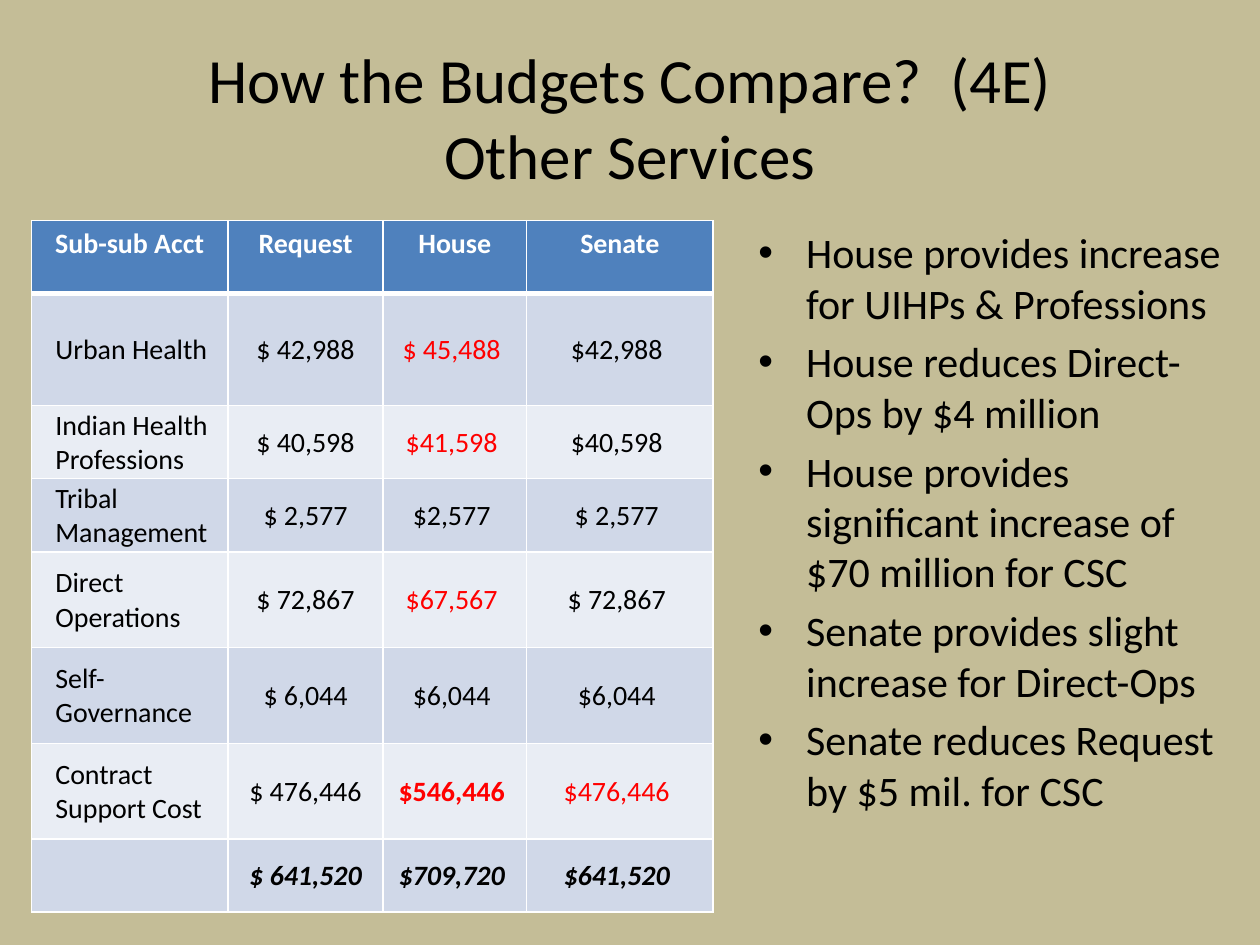
import pptx
import pptx.dml.color
import pptx.enum.text
import pptx.oxml
import pptx.oxml.ns
import pptx.util

Inches = pptx.util.Inches
Pt = pptx.util.Pt
RGBColor = pptx.dml.color.RGBColor
PP_ALIGN = pptx.enum.text.PP_ALIGN
MSO_ANCHOR = pptx.enum.text.MSO_ANCHOR

KHAKI = RGBColor(0xC4, 0xBD, 0x97)
BLACK = RGBColor(0, 0, 0)
WHITE = RGBColor(255, 255, 255)
RED = RGBColor(255, 0, 0)
HEADER_BLUE = RGBColor(0x4F, 0x81, 0xBD)
BANDS = (RGBColor(0xD0, 0xD8, 0xE8), RGBColor(0xE9, 0xED, 0xF4))

TITLE = "How the Budgets Compare?  (4E)\nOther Services"
BUDGETS = [
    ("Sub-sub Acct", "Request", "House", "Senate"),
    ("Urban Health", " $ 42,988 ", "$ 45,488 ", "$42,988 "),
    ("Indian Health Professions", " $ 40,598 ", "$41,598 ", "$40,598 "),
    ("Tribal Management", " $ 2,577 ", "$2,577 ", "$ 2,577 "),
    ("Direct Operations", " $ 72,867 ", "$67,567 ", "$ 72,867 "),
    ("Self-Governance", " $ 6,044 ", "$6,044 ", "$6,044 "),
    ("Contract Support Cost", " $ 476,446 ", "$546,446 ", "$476,446 "),
    ("", " $ 641,520 ", "$709,720 ", "$641,520 "),
]
COLUMN_WIDTHS = (1.56, 1.23, 1.14, 1.48)
ROW_HEIGHTS = (0.58, 0.89, 0.58, 0.58, 0.76, 0.76, 0.76, 0.58)
TOTAL_ROW = len(BUDGETS) - 1
# Cells (row, column) that differ from the request
CHANGED = {(1, 2), (2, 2), (4, 2), (6, 2), (6, 3)}
LARGEST_CHANGE = (6, 2)

FINDINGS = [
    "House provides increase for UIHPs & Professions",
    "House reduces Direct-Ops by $4 million",
    "House provides significant increase of $70 million for CSC",
    "Senate provides slight increase for Direct-Ops",
    "Senate reduces Request by $5 mil. for CSC",
]


def apply(target, values):
    for name, value in values.items():
        setattr(target, name, value)


def write(paragraph, text, size, color=BLACK, **style):
    paragraph.text = text
    for run in paragraph.runs:
        apply(run.font, {"name": "Calibri", "size": Pt(size), **style})
        run.font.color.rgb = color


def set_borders(cell, bottom):
    """Draw white edges; they must precede the fill in the cell properties."""
    properties = cell._tc.get_or_add_tcPr()
    for index, (edge, width) in enumerate(
            {"lnL": 1, "lnR": 1, "lnT": 1, "lnB": bottom}.items()):
        properties.insert(index, pptx.oxml.parse_xml(
            f'<a:{edge} {pptx.oxml.ns.nsdecls("a")} w="{Pt(width)}">'
            f'<a:solidFill><a:srgbClr val="{WHITE}"/></a:solidFill></a:{edge}>'))


def add_text_area(slide, box):
    frame = slide.shapes.add_textbox(*map(Inches, box)).text_frame
    frame.word_wrap = True
    return frame


def add_title(slide, box):
    frame = add_text_area(slide, box)
    frame.vertical_anchor = MSO_ANCHOR.MIDDLE
    heading = frame.paragraphs[0]
    heading.alignment = PP_ALIGN.CENTER
    write(heading, TITLE, 36)


def format_cell(cell, row, column, text):
    header = row == 0
    cell.fill.solid()
    cell.fill.fore_color.rgb = HEADER_BLUE if header else BANDS[(row - 1) % 2]
    set_borders(cell, 3 if header else 1)
    left, other, bottom = (0.05, 0.05, 0.05) if header else (
        0.01 if column else 0.19, 0.01, 0)
    apply(cell, {
        "margin_left": Inches(left), "margin_right": Inches(other),
        "margin_top": Inches(other), "margin_bottom": Inches(bottom),
        "vertical_anchor": MSO_ANCHOR.TOP if header else MSO_ANCHOR.MIDDLE,
    })
    paragraph = cell.text_frame.paragraphs[0]
    paragraph.alignment = PP_ALIGN.CENTER if header or column else PP_ALIGN.LEFT
    color = WHITE if header else RED if (row, column) in CHANGED else BLACK
    write(paragraph, text, 16, color,
          bold=row in (0, TOTAL_ROW) or (row, column) == LARGEST_CHANGE,
          italic=row == TOTAL_ROW)


def add_budget_table(slide, box):
    table = slide.shapes.add_table(
        len(BUDGETS), len(COLUMN_WIDTHS), *map(Inches, box)).table
    for column, width in zip(table.columns, COLUMN_WIDTHS):
        column.width = Inches(width)
    for row, height in zip(table.rows, ROW_HEIGHTS):
        row.height = Inches(height)
    for row, budget in enumerate(BUDGETS):
        for column, text in enumerate(budget):
            format_cell(table.cell(row, column), row, column, text)


def add_findings(slide, box):
    frame = add_text_area(slide, box)
    for index, finding in enumerate(FINDINGS):
        paragraph = frame.add_paragraph() if index else frame.paragraphs[0]
        write(paragraph, finding, 24)
        paragraph.space_before = Pt(4.8)
        # Hanging bullet
        properties = paragraph._p.get_or_add_pPr()
        properties.set("marL", str(Inches(0.38)))
        properties.set("indent", str(Inches(-0.38)))
        properties.append(pptx.oxml.parse_xml(
            f'<a:buFont {pptx.oxml.ns.nsdecls("a")} typeface="Arial"/>'))
        properties.append(pptx.oxml.parse_xml(
            f'<a:buChar {pptx.oxml.ns.nsdecls("a")} char="•"/>'))


def main():
    deck = pptx.Presentation()
    apply(deck, {"slide_width": Inches(10), "slide_height": Inches(7.5)})
    slide = deck.slides.add_slide(deck.slide_layouts[6])
    slide.background.fill.solid()
    slide.background.fill.fore_color.rgb = KHAKI
    add_title(slide, (0.5, 0.3, 9, 1.25))
    add_budget_table(slide, (0.25, 1.75, 5.42, 5.51))
    add_findings(slide, (5.92, 1.75, 3.92, 4.95))
    deck.save("out.pptx")


if __name__ == "__main__":
    main()
